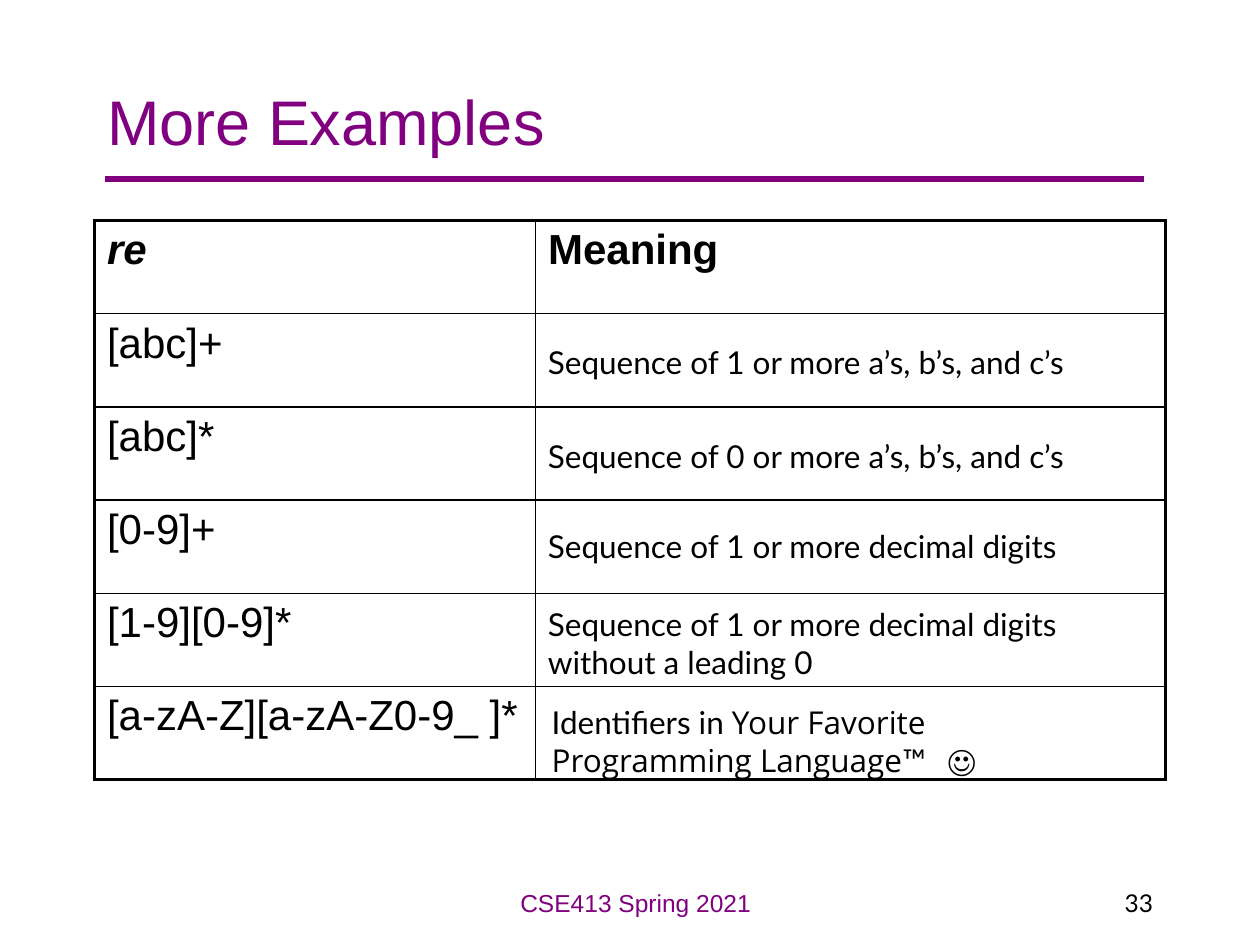
from lxml.etree import SubElement
from pptx import Presentation
from pptx.dml.color import RGBColor
from pptx.enum.shapes import MSO_CONNECTOR
from pptx.enum.text import MSO_ANCHOR, PP_ALIGN
from pptx.oxml.ns import qn
from pptx.util import Inches, Pt

PURPLE = RGBColor(0x80, 0x00, 0x80)
BLACK = RGBColor(0x00, 0x00, 0x00)
HEADING_FONT, BODY_FONT, ALTERNATE_FONT = "Arial", "Lato", "Open Sans"
THIN, THICK = 1, 2.25

EXPRESSIONS = ["[abc]+", "[abc]*", "[0-9]+", "[1-9][0-9]*", "[a-zA-Z][a-zA-Z0-9_ ]*"]

# Each meaning: left, top, width, height, lines
MEANINGS = [
    (4.25, 2.67, 4.49, 0.4, ["Sequence of 1 or more a’s, b’s, and c’s"]),
    (4.25, 3.42, 4.49, 0.4, ["Sequence of 0 or more a’s, b’s, and c’s"]),
    (4.25, 4.13, 4.35, 0.4, ["Sequence of 1 or more decimal digits"]),
    (4.25, 4.75, 4.35, 0.71, ["Sequence of 1 or more decimal digits", "without a leading 0"]),
]


def add_run(paragraph, text, size, font=BODY_FONT, color=BLACK, bold=False, italic=False):
    run = paragraph.add_run()
    run.text = text
    run.font.size = Pt(size)
    run.font.name = font
    run.font.color.rgb = color
    run.font.bold = bold
    run.font.italic = italic


def add_text_frame(slide, left, top, width, height):
    box = slide.shapes.add_textbox(Inches(left), Inches(top), Inches(width), Inches(height))
    box.text_frame.word_wrap = True
    return box.text_frame


def add_title(slide, left, top, width, height):
    title = slide.shapes.title
    title.left, title.top = Inches(left), Inches(top)
    title.width, title.height = Inches(width), Inches(height)
    title.text_frame.vertical_anchor = MSO_ANCHOR.MIDDLE
    paragraph = title.text_frame.paragraphs[0]
    paragraph.alignment = PP_ALIGN.LEFT
    add_run(paragraph, "More Examples", 36, HEADING_FONT, PURPLE)

    # Rule under the title
    rule_top = Inches(top + 1.09)
    rule = slide.shapes.add_connector(
        MSO_CONNECTOR.STRAIGHT, Inches(left + 0.08), rule_top, Inches(left + 8.33), rule_top)
    rule.line.color.rgb = PURPLE
    rule.line.width = Pt(3)
    SubElement(rule.element.spPr, qn("a:effectLst"))


def set_borders(cell, widths):
    properties = cell._tc.get_or_add_tcPr()
    for side, width in widths.items():
        line = SubElement(properties, qn(f"a:ln{side}"), w=str(Pt(width)))
        fill = SubElement(line, qn("a:solidFill"))
        SubElement(fill, qn("a:srgbClr"), val=str(BLACK))


def add_expression_table(slide, left, top, column_widths, row_height):
    row_count, column_count = len(EXPRESSIONS) + 1, len(column_widths)
    table = slide.shapes.add_table(
        row_count, column_count, Inches(left), Inches(top),
        Inches(sum(column_widths)), Inches(row_height * row_count)).table
    table.first_row = table.horz_banding = False
    for column, width in zip(table.columns, column_widths):
        column.width = Inches(width)
    for row in table.rows:
        row.height = Inches(row_height)

    # Thick frame, thin inner lines
    for row in range(row_count):
        for column in range(column_count):
            cell = table.cell(row, column)
            set_borders(cell, {
                "L": THICK if column == 0 else THIN,
                "R": THICK if column == column_count - 1 else THIN,
                "T": THICK if row == 0 else THIN,
                "B": THICK if row == row_count - 1 else THIN,
            })
            cell.fill.background()

    # Header row and first column
    for column, heading in enumerate(["re", "Meaning"]):
        paragraph = table.cell(0, column).text_frame.paragraphs[0]
        add_run(paragraph, heading, 24, HEADING_FONT, bold=True, italic=column == 0)
    for row, expression in enumerate(EXPRESSIONS, start=1):
        add_run(table.cell(row, 0).text_frame.paragraphs[0], expression, 24, HEADING_FONT)


def add_meaning(slide, left, top, width, height, lines):
    frame = add_text_frame(slide, left, top, width, height)
    for index, line in enumerate(lines):
        paragraph = frame.add_paragraph() if index else frame.paragraphs[0]
        add_run(paragraph, line, 18)


def add_identifier_meaning(slide, left, top, width, height):
    paragraph = add_text_frame(slide, left, top, width, height).paragraphs[0]
    add_run(paragraph, "Identifiers in ", 18)
    add_run(paragraph, "Your Favorite", 18, ALTERNATE_FONT)
    paragraph.add_line_break()
    add_run(paragraph, "Programming Language", 18, ALTERNATE_FONT)
    add_run(paragraph, "™\t☺", 18)
    # Tab stop that places the smiley
    tab_list = SubElement(paragraph._p.get_or_add_pPr(), qn("a:tabLst"))
    SubElement(tab_list, qn("a:tab"), pos=str(Inches(3.14)), algn="l")


def add_footer(slide, top, height):
    number = add_text_frame(slide, 7.17, top, 2.08, height).paragraphs[0]
    number.alignment = PP_ALIGN.RIGHT
    add_run(number, "33", 14)
    course = add_text_frame(slide, 3.17, top, 3.75, height).paragraphs[0]
    course.alignment = PP_ALIGN.CENTER
    add_run(course, "CSE413 Spring 2021", 14, HEADING_FONT, PURPLE)


def main():
    presentation = Presentation()
    presentation.slide_width, presentation.slide_height = Inches(10), Inches(7.5)
    slide = presentation.slides.add_slide(presentation.slide_layouts.get_by_name("Title Only"))
    add_title(slide, 0.75, 0.33, 8.5, 1.25)
    add_expression_table(slide, 0.75, 1.75, [3.5, 5], 0.74)
    add_footer(slide, 7, 0.5)
    for meaning in MEANINGS:
        add_meaning(slide, *meaning)
    add_identifier_meaning(slide, 4.28, 5.53, 4.19, 0.71)
    presentation.save("out.pptx")


if __name__ == "__main__":
    main()
